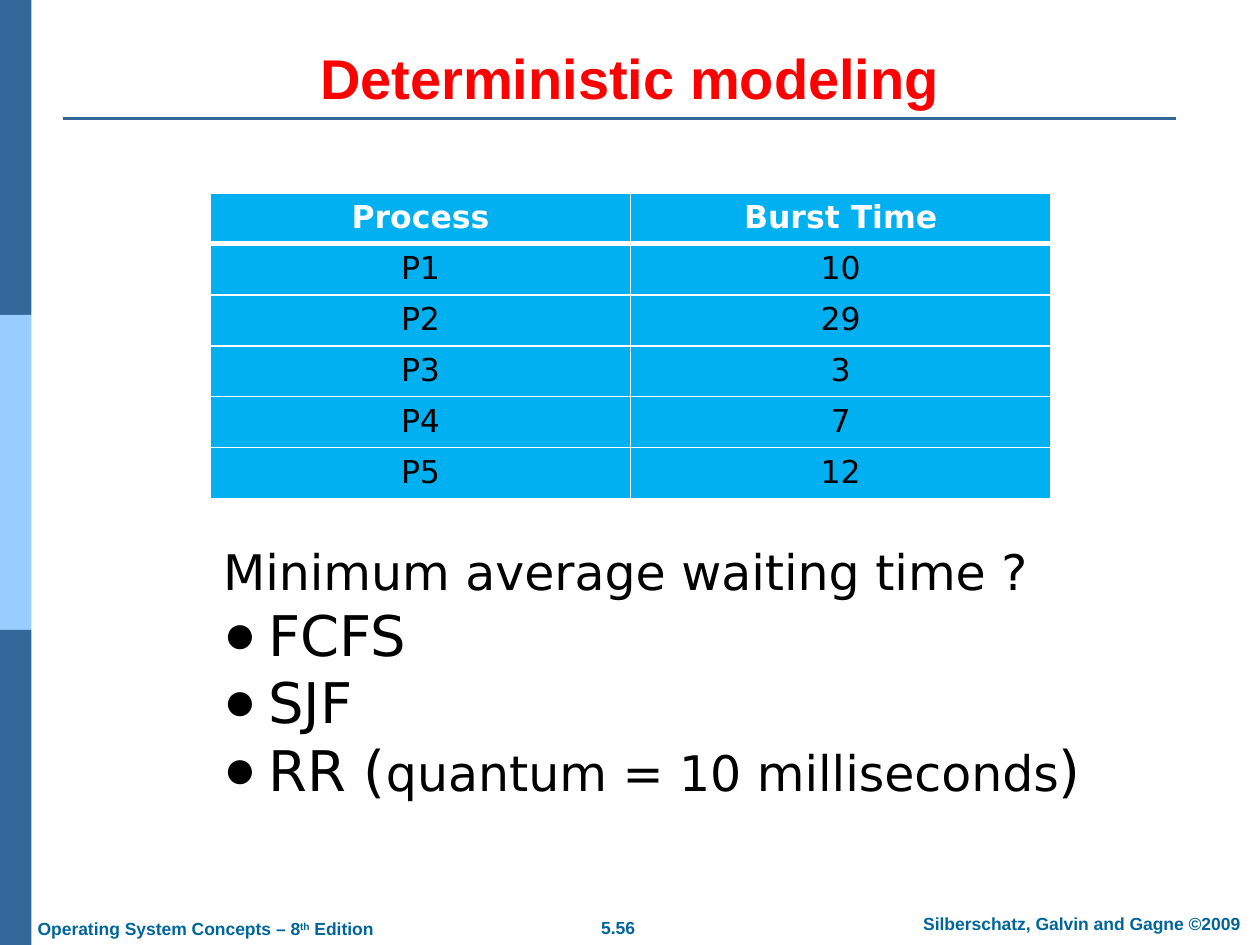
from lxml import etree
from pptx import Presentation
from pptx.dml.color import RGBColor
from pptx.enum.shapes import MSO_CONNECTOR, MSO_SHAPE
from pptx.enum.text import MSO_ANCHOR, MSO_AUTO_SIZE, PP_ALIGN
from pptx.oxml.ns import qn
from pptx.util import Inches, Pt

LEFT, CENTER = PP_ALIGN.LEFT, PP_ALIGN.CENTER
TOP, BOTTOM = MSO_ANCHOR.TOP, MSO_ANCHOR.BOTTOM
NO_FIT = MSO_AUTO_SIZE.NONE
RECT, STRAIGHT = MSO_SHAPE.RECTANGLE, MSO_CONNECTOR.STRAIGHT

COLS, ROWS = 40, 30
HEAD, BODY = "Arial", "DejaVu Sans"
NAVY, SKY, TEAL = "336699", "99CCFF", "006699"
RED, CYAN, WHITE, BLACK = "FF0000", "00B0F0", "FFFFFF", "000000"


def rgb(value):
    return RGBColor.from_string(value)


class Deck:
    """Holds the grid, the style and the current slide."""

    def __init__(self):
        self.prs = Presentation()
        self.prs.slide_width, self.prs.slide_height = Inches(10), Inches(7.5)
        self.col = self.prs.slide_width / COLS
        self.row = self.prs.slide_height / ROWS
        self.s = self.prs.slides.add_slide(self.prs.slide_layouts[1])

    def box(self, x, y, w, h):
        return (round(x * self.col), round(y * self.row),
                round(w * self.col), round(h * self.row))

    def run(self, p, text, size, font, color, bold=False, baseline=None):
        r = p.add_run()
        r.text = text
        r.font.size, r.font.name, r.font.bold = Pt(size), font, bold
        r.font.color.rgb = rgb(color)
        if baseline:
            r._r.get_or_add_rPr().set("baseline", str(baseline))

    def bar(self, x, y, w, h, color):
        sp = self.s.shapes.add_shape(RECT, *self.box(x, y, w, h))
        sp.shadow.inherit = False
        sp.fill.solid()
        sp.fill.fore_color.rgb = rgb(color)
        sp.line.fill.background()

    def rule(self, x1, x2, y, color, width):
        left, top, length, _ = self.box(x1, y, x2 - x1, 0)
        sp = self.s.shapes.add_connector(STRAIGHT, left, top, left + length, top)
        sp.line.color.rgb = rgb(color)
        sp.line.width = Pt(width)
        etree.SubElement(sp._element.spPr, qn("a:effectLst"))

    def footer(self, x, y, w, runs, align=CENTER):
        sp = self.s.shapes.add_textbox(*self.box(x, y, w, 1.08))
        tf = sp.text_frame
        tf.word_wrap = False
        p = tf.paragraphs[0]
        p.alignment = align
        for text, baseline in runs:
            self.run(p, text, 10, HEAD, TEAL, True, baseline)

    def placeholder(self, sp, x, y, w, h, anchor):
        sp.left, sp.top, sp.width, sp.height = self.box(x, y, w, h)
        tf = sp.text_frame
        tf.word_wrap, tf.auto_size, tf.vertical_anchor = True, NO_FIT, anchor
        return tf

    def title(self, text, x, y, w, h):
        tf = self.placeholder(self.s.shapes.title, x, y, w, h, BOTTOM)
        p = tf.paragraphs[0]
        p.alignment = CENTER
        self.run(p, text, 32, HEAD, RED, True)

    def bullets(self, items, x, y, w, h):
        """Each item is (bullet or None, [(text, size), ...])."""
        tf = self.placeholder(self.s.placeholders[1], x, y, w, h, TOP)
        for i, (bullet, runs) in enumerate(items):
            p = tf.add_paragraph() if i else tf.paragraphs[0]
            p.alignment, p.space_before = LEFT, Pt(0)
            pPr = p._p.get_or_add_pPr()
            hang = Inches(0.36) if bullet else 0
            pPr.set("marL", str(hang))
            pPr.set("indent", str(-hang))
            if bullet:
                etree.SubElement(pPr, qn("a:buFont"), typeface=HEAD)
                etree.SubElement(pPr, qn("a:buChar"), char=bullet)
            else:
                etree.SubElement(pPr, qn("a:buNone"))
            for text, size in runs:
                self.run(p, text, size, BODY, BLACK)

    def borders(self, cell, **widths):
        tcPr = cell._tc.get_or_add_tcPr()
        for i, (side, width) in enumerate(widths.items()):
            ln = etree.Element(qn("a:" + side), w=str(Pt(width)))
            fill = etree.SubElement(ln, qn("a:solidFill"))
            etree.SubElement(fill, qn("a:srgbClr"), val=WHITE)
            tcPr.insert(i, ln)

    def table(self, data, x, y, w, h):
        shape = self.s.shapes.add_table(len(data), len(data[0]),
                                        *self.box(x, y, w, h))
        tbl = shape.table
        tbl.horz_banding = False
        for i, values in enumerate(data):
            head = i == 0
            for j, text in enumerate(values):
                cell = tbl.cell(i, j)
                cell.fill.solid()
                cell.fill.fore_color.rgb = rgb(CYAN)
                p = cell.text_frame.paragraphs[0]
                p.alignment = CENTER
                self.run(p, text, 18, BODY, WHITE if head else BLACK, head)
                self.borders(cell, lnL=1, lnR=1, lnT=3 if i == 1 else 1,
                             lnB=3 if head else 1)


def main():
    deck = Deck()

    # Side bar and title rule
    for i, color in enumerate((NAVY, SKY, NAVY)):
        deck.bar(0, i * ROWS / 3, 1, ROWS / 3, color)
    deck.rule(2, 37.32, 3.76, NAVY, 1.5)

    # Footer
    deck.footer(18.64, 28.92, 1.96, [("5.56", None)])
    deck.footer(28.4, 28.8, 11.88,
                [("Silberschatz, Galvin and Gagne ©2009", None)])
    deck.footer(0.8, 28.96, 11.52,
                [("Operating System Concepts – 8", None), ("th", 30000),
                 (" Edition", None)], LEFT)

    # Title, process table and question
    deck.title("Deterministic modeling", 2, 1.2, 36, 2.52)
    deck.table([("Process", "Burst Time"), ("P1", "10"), ("P2", "29"),
                ("P3", "3"), ("P4", "7"), ("P5", "12")],
               6.68, 6.12, 26.68, 9.72)
    deck.bullets([
        (None, [("Minimum average waiting time ?", 28)]),
        ("●", [("FCFS", 32)]),
        ("●", [("SJF", 32)]),
        ("●", [("RR (", 32), ("quantum = 10 milliseconds", 28), (")", 32)]),
    ], 6.68, 17, 29.08, 8.76)

    deck.prs.save("out.pptx")


if __name__ == "__main__":
    main()
